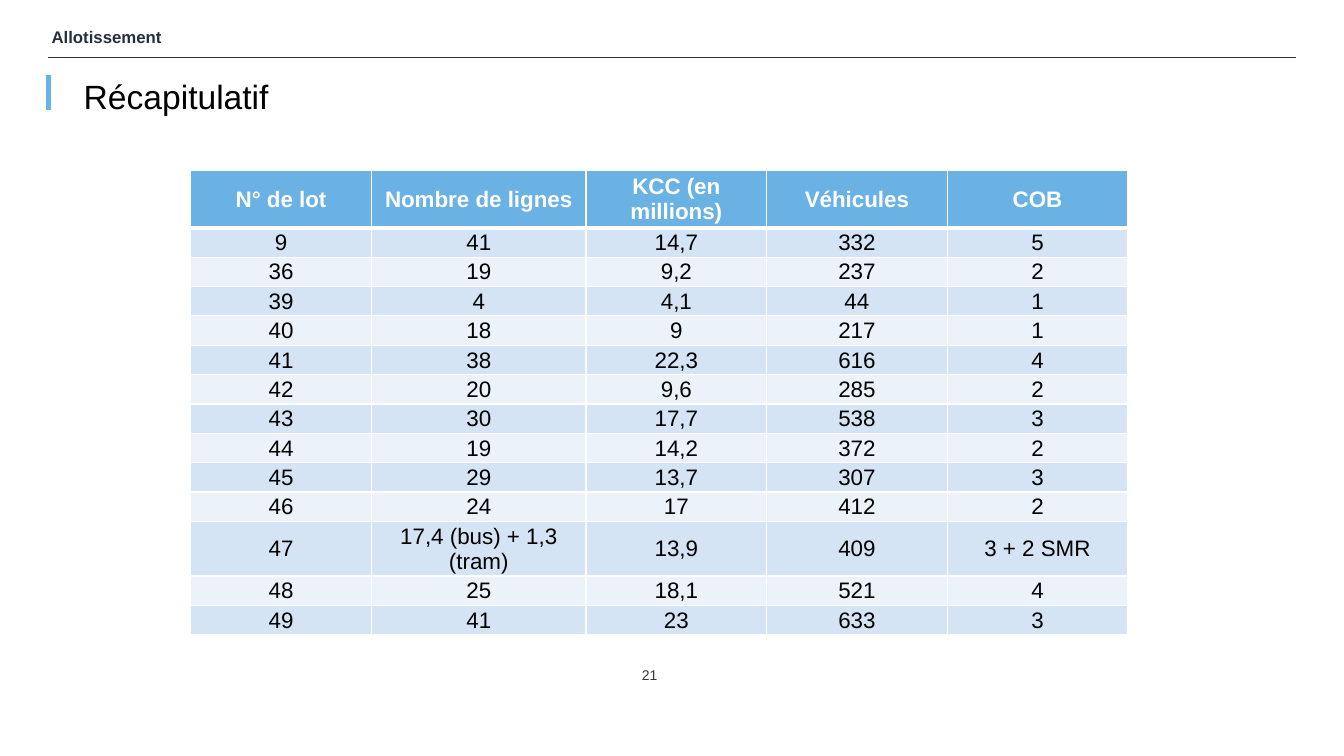
from dataclasses import dataclass

from lxml import etree
from pptx import Presentation
from pptx import util as u
from pptx.dml.color import RGBColor
from pptx.enum import shapes, text
from pptx.oxml.ns import qn
from pptx.slide import Slide
from pptx.table import _Cell as Cell
from pptx.text.text import TextFrame


@dataclass(frozen=True)
class Theme:
    font: str = "Arial"
    ink: str = "25303B"
    accent: str = "64B5E5"
    black: str = "000000"
    white: str = "FFFFFF"
    page_ink: str = "383934"
    header_fill: str = "6AB2E4"
    bands: tuple[str, str] = ("D4E4F5", "EBF2FA")
    section_size: int = 12
    page_size: int = 10
    title_size: int = 24
    table_size: int = 16
    grid_width: int = 1
    header_rule_width: int = 3


@dataclass(frozen=True)
class Rule:
    start: tuple[float, float]
    end: tuple[float, float]
    color: str
    width: float


@dataclass(frozen=True)
class Label:
    wording: str
    box: tuple[float, float, float, float]
    size: int
    color: str
    bold: bool = False
    align: text.PP_ALIGN = text.PP_ALIGN.LEFT
    anchor: text.MSO_ANCHOR = text.MSO_ANCHOR.TOP
    auto_size: text.MSO_AUTO_SIZE = text.MSO_AUTO_SIZE.NONE
    line_spacing: float = 1.0


THEME = Theme()

RULES = (
    Rule((1.22, 1.45), (32.66, 1.45), THEME.ink, 0.5),
    Rule((1.22, 1.9), (1.22, 2.78), THEME.accent, 3),
)

LABELS = (
    Label("Allotissement", (1.05, 0.61, 32.15, 0.74), THEME.section_size, THEME.ink,
          bold=True, line_spacing=0.9),
    Label("21", (15.6, 16.5, 1.22, 1.02), THEME.page_size, THEME.page_ink,
          align=text.PP_ALIGN.RIGHT, anchor=text.MSO_ANCHOR.MIDDLE),
    Label("Récapitulatif", (1.86, 1.8, 26.9, 1.28), THEME.title_size, THEME.black,
          auto_size=text.MSO_AUTO_SIZE.SHAPE_TO_FIT_TEXT),
)

LOTS = (
    ("N° de lot", "Nombre de lignes", "KCC (en millions)", "Véhicules", "COB"),
    ("9", "41", "14,7", "332", "5"),
    ("36", "19", "9,2", "237", "2"),
    ("39", "4", "4,1", "44", "1"),
    ("40", "18", "9", "217", "1"),
    ("41", "38", "22,3", "616", "4"),
    ("42", "20", "9,6", "285", "2"),
    ("43", "30", "17,7", "538", "3"),
    ("44", "19", "14,2", "372", "2"),
    ("45", "29", "13,7", "307", "3"),
    ("46", "24", "17", "412", "2"),
    ("47", "17,4 (bus) + 1,3 (tram)", "13,9", "409", "3 + 2 SMR"),
    ("48", "25", "18,1", "521", "4"),
    ("49", "41", "23", "633", "3"),
)
TABLE_LEFT, TABLE_TOP = 4.81, 4.29
COLUMN_WIDTHS = (4.55, 5.41, 4.55, 4.55, 4.55)
ROW_HEIGHT = 0.74
TALL_ROWS = {0: 1.45, 11: 1.37}


def set_attributes(target: object, values: dict[str, object]) -> None:
    for name, value in values.items():
        setattr(target, name, value)


def write_text(frame: TextFrame, wording: str, size: int, color: str, bold: bool,
               align: text.PP_ALIGN) -> None:
    frame.text = wording
    paragraph = frame.paragraphs[0]
    paragraph.alignment = align
    font = paragraph.runs[0].font
    set_attributes(font, {"name": THEME.font, "size": u.Pt(size), "bold": bold})
    font.color.rgb = RGBColor.from_string(color)


def draw_rule(slide: Slide, rule: Rule) -> None:
    connector = slide.shapes.add_connector(
        shapes.MSO_CONNECTOR.STRAIGHT, *map(u.Cm, rule.start + rule.end))
    connector.line.color.rgb = RGBColor.from_string(rule.color)
    connector.line.width = u.Pt(rule.width)
    etree.SubElement(connector._element.spPr, qn("a:effectLst"))


def draw_label(slide: Slide, label: Label) -> None:
    frame = slide.shapes.add_textbox(*map(u.Cm, label.box)).text_frame
    set_attributes(frame, {"word_wrap": True, "vertical_anchor": label.anchor,
                           "auto_size": label.auto_size})
    write_text(frame, label.wording, label.size, label.color, label.bold, label.align)
    frame.paragraphs[0].line_spacing = label.line_spacing


def add_borders(cell: Cell, widths: dict[str, int]) -> None:
    """Draw white cell borders; widths maps a side (L, R, T, B) to points."""
    properties = cell._tc.get_or_add_tcPr()
    for side, width in widths.items():
        line = etree.SubElement(properties, qn(f"a:ln{side}"), w=str(u.Pt(width)))
        fill = etree.SubElement(line, qn("a:solidFill"))
        etree.SubElement(fill, qn("a:srgbClr"), val=THEME.white)


def format_cell(cell: Cell, wording: str, row: int) -> None:
    header = row == 0
    set_attributes(cell, {
        "margin_left": u.Cm(0.02), "margin_right": u.Cm(0.02),
        "margin_top": u.Cm(0.02), "margin_bottom": u.Cm(0),
        "vertical_anchor": text.MSO_ANCHOR.MIDDLE,
    })
    add_borders(cell, {
        "L": THEME.grid_width,
        "R": THEME.grid_width,
        "T": THEME.header_rule_width if row == 1 else THEME.grid_width,
        "B": THEME.header_rule_width if header else THEME.grid_width,
    })
    cell.fill.solid()
    fill = THEME.header_fill if header else THEME.bands[(row - 1) % 2]
    cell.fill.fore_color.rgb = RGBColor.from_string(fill)
    write_text(cell.text_frame, wording, THEME.table_size,
               THEME.white if header else THEME.black, header, text.PP_ALIGN.CENTER)


def draw_lot_table(slide: Slide) -> None:
    heights = [TALL_ROWS.get(row, ROW_HEIGHT) for row in range(len(LOTS))]
    table = slide.shapes.add_table(
        len(LOTS), len(COLUMN_WIDTHS), u.Cm(TABLE_LEFT), u.Cm(TABLE_TOP),
        u.Cm(sum(COLUMN_WIDTHS)), u.Cm(sum(heights))).table
    for column, width in zip(table.columns, COLUMN_WIDTHS):
        column.width = u.Cm(width)
    for row, (height, lot) in enumerate(zip(heights, LOTS)):
        table.rows[row].height = u.Cm(height)
        for column, wording in enumerate(lot):
            format_cell(table.cell(row, column), wording, row)


def main() -> None:
    presentation = Presentation()
    set_attributes(presentation, {"slide_width": u.Cm(33.87), "slide_height": u.Cm(19.05)})
    slide = presentation.slides.add_slide(presentation.slide_layouts[6])
    for rule in RULES:
        draw_rule(slide, rule)
    for label in LABELS:
        draw_label(slide, label)
    draw_lot_table(slide)
    presentation.save("out.pptx")


if __name__ == "__main__":
    main()
